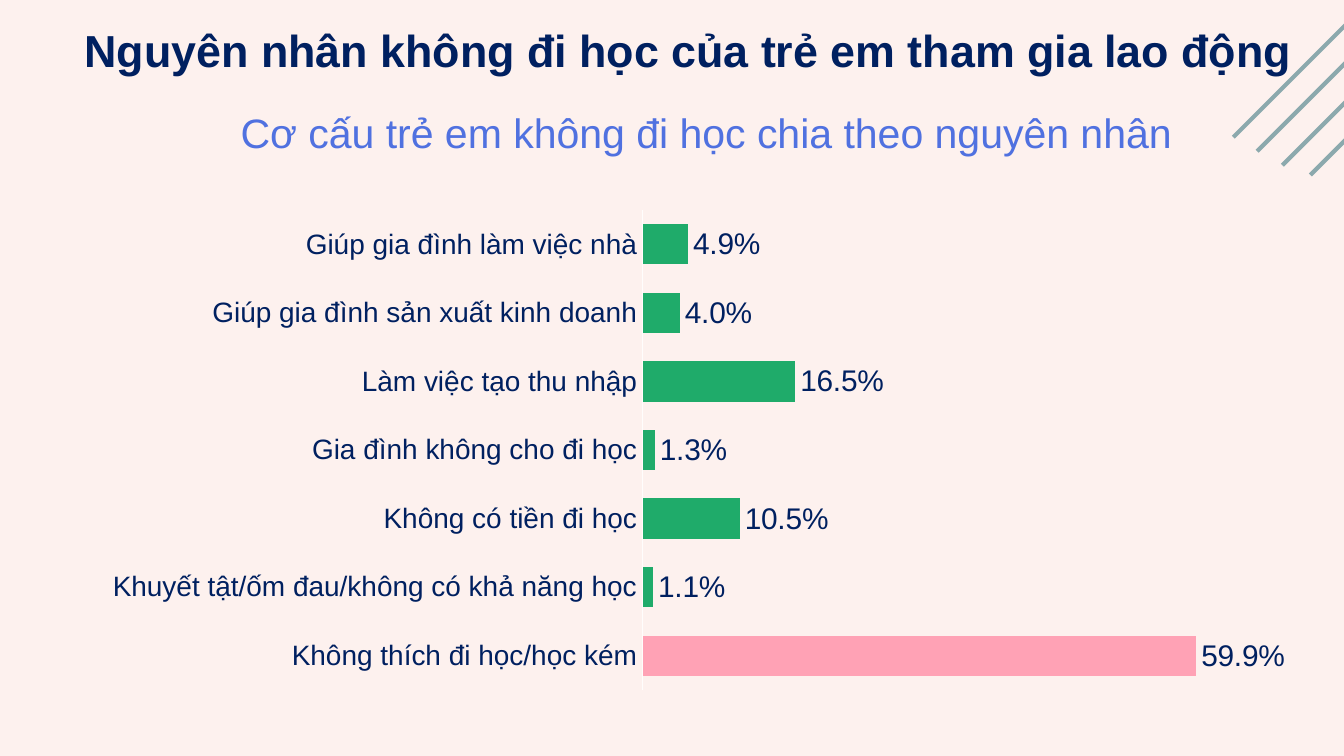
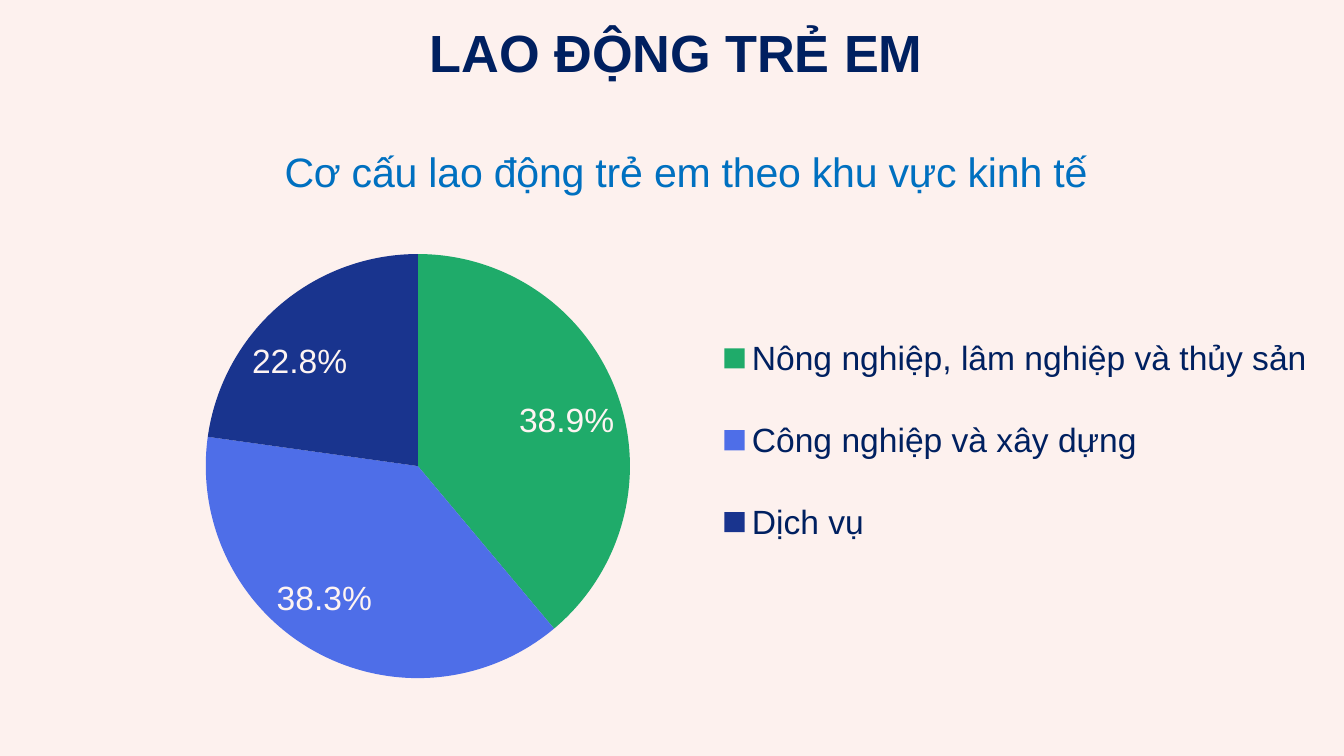
import dataclasses
import typing

import lxml.etree
import pptx
import pptx.chart.data
import pptx.dml.color
import pptx.enum.chart
import pptx.enum.shapes
import pptx.enum.text
import pptx.oxml.ns
import pptx.util

# Shared look
EMU_PER_PX = 9525
WIDTH, HEIGHT = 960, 540
FONT = "Arial"
CREAM, NAVY, GREEN, PINK = "FDF1EE", "002060", "1FAB6A", "FFA2B5"
BLUE, INDIGO, PERIWINKLE = "4E6EE8", "19348E", "5071E0"
SKY, SAGE, AXIS_WHITE, LABEL_WHITE = "0070C0", "8CA9AD", "FFFDFC", "FEF4F2"
PERCENT = "0.0%"


class Box(typing.NamedTuple):
    left: int
    top: int
    width: int = 0
    height: int = 0


class Stripe(typing.NamedTuple):
    """Starts at its lower end and rises to the right at 45 degrees."""
    x: int
    y: int
    reach: int


@dataclasses.dataclass
class TextStyle:
    size: int
    color: str
    bold: bool = False


@dataclasses.dataclass
class ChartSpec:
    kind: typing.Any
    box: Box
    plot: Box  # measured from the chart's corner
    series_name: str
    values: dict[str, float]
    colors: list[str]
    labels: TextStyle
    label_position: typing.Any


POSITION = pptx.enum.chart.XL_LABEL_POSITION

REASONS = ChartSpec(
    kind=pptx.enum.chart.XL_CHART_TYPE.BAR_CLUSTERED,
    box=Box(45, 132, 876, 374),
    plot=Box(414, 18, 462, 343),
    series_name="Series 1",
    values={
        "Không thích đi học/học kém": 0.599,
        "Khuyết tật/ốm đau/không có khả năng học": 0.011,
        "Không có tiền đi học": 0.105,
        "Gia đình không cho đi học": 0.013,
        "Làm việc tạo thu nhập": 0.165,
        "Giúp gia đình sản xuất kinh doanh": 0.04,
        "Giúp gia đình làm việc nhà": 0.049,
    },
    colors=[PINK],
    labels=TextStyle(16, NAVY),
    label_position=POSITION.OUTSIDE_END,
)

SECTORS = ChartSpec(
    kind=pptx.enum.chart.XL_CHART_TYPE.PIE,
    box=Box(33, 84, 915, 422),
    plot=Box(114, 77, 303, 344),
    series_name="Cơ cấu lao động trẻ em theo khu vực kinh tế",
    values={
        "Nông nghiệp, lâm nghiệp và thủy sản": 0.389,
        "Công nghiệp và xây dựng": 0.383,
        "Dịch vụ": 0.228,
    },
    colors=[GREEN, BLUE, INDIGO],
    labels=TextStyle(18, LABEL_WHITE),
    label_position=POSITION.BEST_FIT,
)

# Corner stripes, which bleed over the right edge
STRIPES = [Stripe(881, 98, 271), Stripe(898, 108, 264),
           Stripe(916, 118, 255), Stripe(936, 125, 247)]


# Helpers
def px(length: int) -> pptx.util.Emu:
    return pptx.util.Emu(length * EMU_PER_PX)


def rgb(color: str) -> pptx.dml.color.RGBColor:
    return pptx.dml.color.RGBColor.from_string(color)


def paint(fill, color: str) -> None:
    fill.solid()
    fill.fore_color.rgb = rgb(color)


def style_font(font, style: TextStyle) -> None:
    font.name = FONT
    font.size = pptx.util.Pt(style.size)
    font.bold = style.bold
    font.color.rgb = rgb(style.color)


def add_run(paragraph, text: str, style: TextStyle) -> None:
    run = paragraph.add_run()
    run.text = text
    style_font(run.font, style)


def write_centered(shape, text: str, style: TextStyle):
    frame = shape.text_frame
    frame.word_wrap = True
    frame.auto_size = pptx.enum.text.MSO_AUTO_SIZE.SHAPE_TO_FIT_TEXT
    frame.vertical_anchor = pptx.enum.text.MSO_ANCHOR.TOP
    paragraph = frame.paragraphs[0]
    paragraph.alignment = pptx.enum.text.PP_ALIGN.CENTER
    add_run(paragraph, text, style)
    return frame


def add_titled_slide(presentation, title: str, box: Box, size: int):
    slide = presentation.slides.add_slide(presentation.slide_layouts[5])
    shape = slide.shapes.title
    shape.left, shape.top, shape.width, shape.height = map(px, box)
    frame = write_centered(shape, title, TextStyle(size, NAVY, True))
    frame.margin_left = frame.margin_right = 0
    frame.margin_top = frame.margin_bottom = 0
    frame.paragraphs[0].line_spacing = pptx.util.Pt(27.7)
    return slide


def add_stripes(slide) -> None:
    for x, y, reach in STRIPES:
        line = slide.shapes.add_connector(
            pptx.enum.shapes.MSO_CONNECTOR.STRAIGHT,
            px(x), px(y), px(x + reach), px(y - reach))
        line.line.color.rgb = rgb(SAGE)
        line.line.width = pptx.util.Pt(2.25)
        lxml.etree.SubElement(line._element.spPr,
                              pptx.oxml.ns.qn("a:effectLst"))


def place_part(part, index: int, box: Box, chart_box: Box,
               inner: bool = False) -> None:
    """Give a chart part a manual layout as its child number index."""
    qn = pptx.oxml.ns.qn
    for old in part.findall(qn("c:layout")):
        part.remove(old)
    holder = part.makeelement(qn("c:layout"))
    part.insert(index, holder)
    manual = lxml.etree.SubElement(holder, qn("c:manualLayout"))
    settings = {"layoutTarget": "inner"} if inner else {}
    settings.update(xMode="edge", yMode="edge",
                    x=box.left / chart_box.width, y=box.top / chart_box.height)
    if box.width:
        settings.update(w=box.width / chart_box.width,
                        h=box.height / chart_box.height)
    for name, value in settings.items():
        lxml.etree.SubElement(manual, qn(f"c:{name}")).set("val", str(value))


def add_chart(slide, spec: ChartSpec):
    data = pptx.chart.data.CategoryChartData(number_format=PERCENT)
    data.categories = list(spec.values)
    data.add_series(spec.series_name, list(spec.values.values()))
    chart = slide.shapes.add_chart(spec.kind, *map(px, spec.box), data).chart
    style_font(chart.font, TextStyle(10, CREAM))
    chart.has_legend = False
    chart.has_title = False
    series = chart.plots[0].series[0]
    paint(series.format.fill, GREEN)
    for index, color in enumerate(spec.colors):
        paint(series.points[index].format.fill, color)
    labels = series.data_labels
    labels.show_value = True
    labels.number_format = PERCENT
    labels.number_format_is_linked = False
    labels.position = spec.label_position
    style_font(labels.font, spec.labels)
    place_part(chart._chartSpace.chart.plotArea, 0, spec.plot, spec.box,
               inner=True)
    return chart


# Slides
def build_reasons(presentation) -> None:
    slide = add_titled_slide(
        presentation, "Nguyên nhân không đi học của trẻ em tham gia lao động",
        Box(45, 18, 893, 37), 24)
    add_stripes(slide)

    chart = add_chart(slide, REASONS)
    plot = chart.plots[0]
    plot.gap_width = 70
    plot.vary_by_categories = False
    value_axis = chart.value_axis
    value_axis.visible = False
    value_axis.has_major_gridlines = False
    value_axis.minimum_scale, value_axis.maximum_scale = 0, 0.7
    category_axis = chart.category_axis
    category_axis.major_tick_mark = pptx.enum.chart.XL_TICK_MARK.NONE
    category_axis.format.line.color.rgb = rgb(AXIS_WHITE)
    category_axis.format.line.width = pptx.util.Pt(0.75)
    style_font(category_axis.tick_labels.font, TextStyle(15, NAVY))

    subtitle = slide.shapes.add_textbox(*map(px, Box(130, 72, 749, 45)))
    write_centered(subtitle, "Cơ cấu trẻ em không đi học chia theo nguyên nhân",
                   TextStyle(22, PERIWINKLE))


def build_sectors(presentation) -> None:
    slide = add_titled_slide(presentation, "LAO ĐỘNG TRẺ EM",
                             Box(153, 22, 660, 37), 28)
    chart = add_chart(slide, SECTORS)
    chart.plots[0].vary_by_categories = True

    chart.has_title = True
    title = chart.chart_title
    add_run(title.text_frame.paragraphs[0], SECTORS.series_name,
            TextStyle(22, SKY))
    place_part(title._element, 1, Box(165, 15), SECTORS.box)

    chart.has_legend = True
    legend = chart.legend
    legend.position = pptx.enum.chart.XL_LEGEND_POSITION.RIGHT
    legend.include_in_layout = False
    style_font(legend.font, TextStyle(18, NAVY))
    place_part(legend._element, 1, Box(473, 127, 439, 207), SECTORS.box)


def main() -> None:
    presentation = pptx.Presentation()
    presentation.slide_width = px(WIDTH)
    presentation.slide_height = px(HEIGHT)
    paint(presentation.slide_master.background.fill, CREAM)
    build_reasons(presentation)
    build_sectors(presentation)
    presentation.save("out.pptx")


if __name__ == "__main__":
    main()
